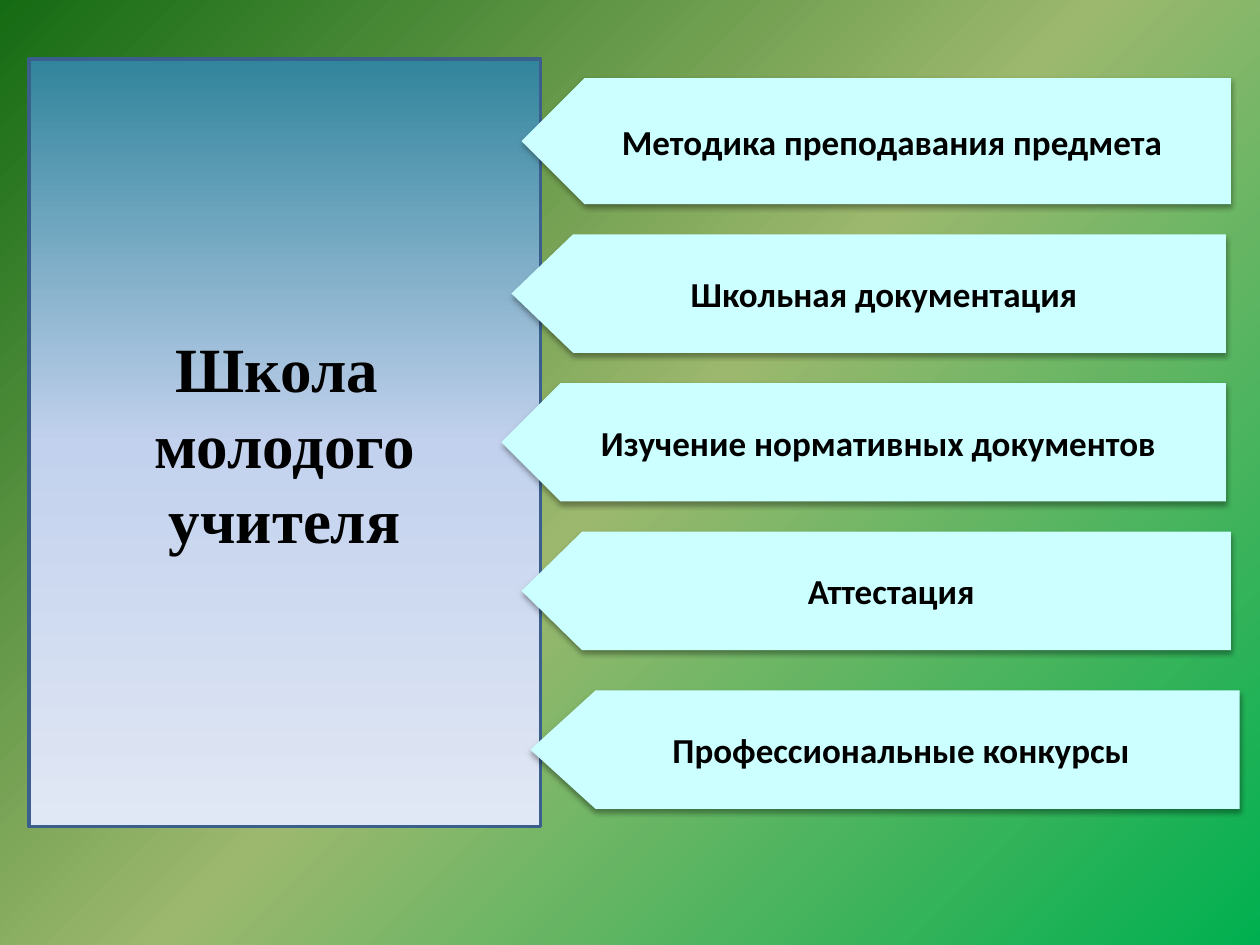
from pptx import Presentation
from pptx.dml.color import RGBColor
from pptx.enum.shapes import MSO_SHAPE
from pptx.enum.text import MSO_ANCHOR, PP_ALIGN
from pptx.oxml import parse_xml
from pptx.oxml.ns import nsdecls, qn
from pptx.util import Inches, Pt

ARROWS = [
    ("Методика преподавания предмета", 4.14, 0.62, 5.63, 1, 0.5),
    ("Школьная документация", 4.06, 1.86, 5.67, 0.94, 0.52),
    ("Изучение нормативных документов", 3.98, 3.04, 5.75, 0.94, 0.5),
    ("Аттестация", 4.14, 4.22, 5.63, 0.94, 0.51),
    ("Профессиональные конкурсы", 4.21, 5.48, 5.63, 0.94, 0.55),
]
TITLE_FONT = {"name": "Times New Roman", "size": Pt(36), "bold": True}
ARROW_FONT = {"name": "Calibri", "size": Pt(20), "bold": True}
LINEAR_DOWN = '<a:lin ang="5400000" scaled="0"/>'
FROM_CORNER = '<a:path path="circle"><a:fillToRect l="100000" t="100000"/></a:path>'


def color(value):
    """Turn a hex string into a colour."""
    return RGBColor.from_string(value)


def set_gradient(fill, parent, stops, direction):
    """Give a shape or background a gradient of (percent, hex) stops."""
    fill.solid()
    stop_xml = "".join(
        f'<a:gs pos="{percent * 1000}"><a:srgbClr val="{value}"/></a:gs>'
        for percent, value in stops
    )
    gradient = parse_xml(
        f'<a:gradFill {nsdecls("a")} rotWithShape="1">'
        f"<a:gsLst>{stop_xml}</a:gsLst>{direction}</a:gradFill>"
    )
    parent.replace(parent.find(qn("a:solidFill")), gradient)


def add_soft_shadow(shape):
    """Add a soft shadow that falls below the shape."""
    shape.shadow.inherit = False
    effects = shape._element.spPr.find(qn("a:effectLst"))
    effects.append(parse_xml(
        f'<a:outerShdw {nsdecls("a")} blurRad="{Pt(3.1)}" dist="{Pt(1.8)}" '
        'dir="5400000" rotWithShape="0"><a:srgbClr val="000000">'
        '<a:alpha val="35000"/></a:srgbClr></a:outerShdw>'
    ))


def set_text(shape, lines, font_values, wrap):
    """Write centred black paragraphs into a shape."""
    frame = shape.text_frame
    frame.word_wrap = wrap
    frame.vertical_anchor = MSO_ANCHOR.MIDDLE
    for index, line in enumerate(lines):
        paragraph = frame.add_paragraph() if index else frame.paragraphs[0]
        paragraph.alignment = PP_ALIGN.CENTER
        run = paragraph.add_run()
        run.text = line
        run.font.color.rgb = color("000000")
        for name, value in font_values.items():
            setattr(run.font, name, value)


def add_title_panel(slide):
    """Add the tall gradient panel with the title."""
    box = map(Inches, (0.23, 0.47, 4.06, 6.09))
    panel = slide.shapes.add_shape(MSO_SHAPE.RECTANGLE, *box)
    panel.shadow.inherit = False
    stops = [(0, "31859C"), (50, "C2D1ED"), (100, "E1E8F5")]
    set_gradient(panel.fill, panel._element.spPr, stops, LINEAR_DOWN)
    panel.line.color.rgb = color("3A5F8C")
    panel.line.width = Pt(2)
    set_text(panel, ["Школа ", "молодого учителя"], TITLE_FONT, True)


def add_arrow(slide, label, left, top, width, height, point):
    """Add a labelled pentagon that points left to the panel."""
    box = map(Inches, (left, top, width, height))
    arrow = slide.shapes.add_shape(MSO_SHAPE.PENTAGON, *box)
    arrow.adjustments[0] = point
    arrow._element.spPr.xfrm.set("flipH", "1")
    arrow.fill.solid()
    arrow.fill.fore_color.rgb = color("CCFFFF")
    arrow.line.fill.background()
    add_soft_shadow(arrow)
    set_text(arrow, [label], ARROW_FONT, False)


def main():
    """Build the slide and save it."""
    presentation = Presentation()
    presentation.slide_width = Inches(10)
    presentation.slide_height = Inches(7.5)
    slide = presentation.slides.add_slide(presentation.slide_layouts[6])
    background = slide.background.fill
    background.solid()
    properties = slide._element.find(".//" + qn("p:bgPr"))
    stops = [(0, "00B050"), (50, "9CB86E"), (100, "156B13")]
    set_gradient(background, properties, stops, FROM_CORNER)
    add_title_panel(slide)
    for arrow in ARROWS:
        add_arrow(slide, *arrow)
    presentation.save("out.pptx")


if __name__ == "__main__":
    main()
